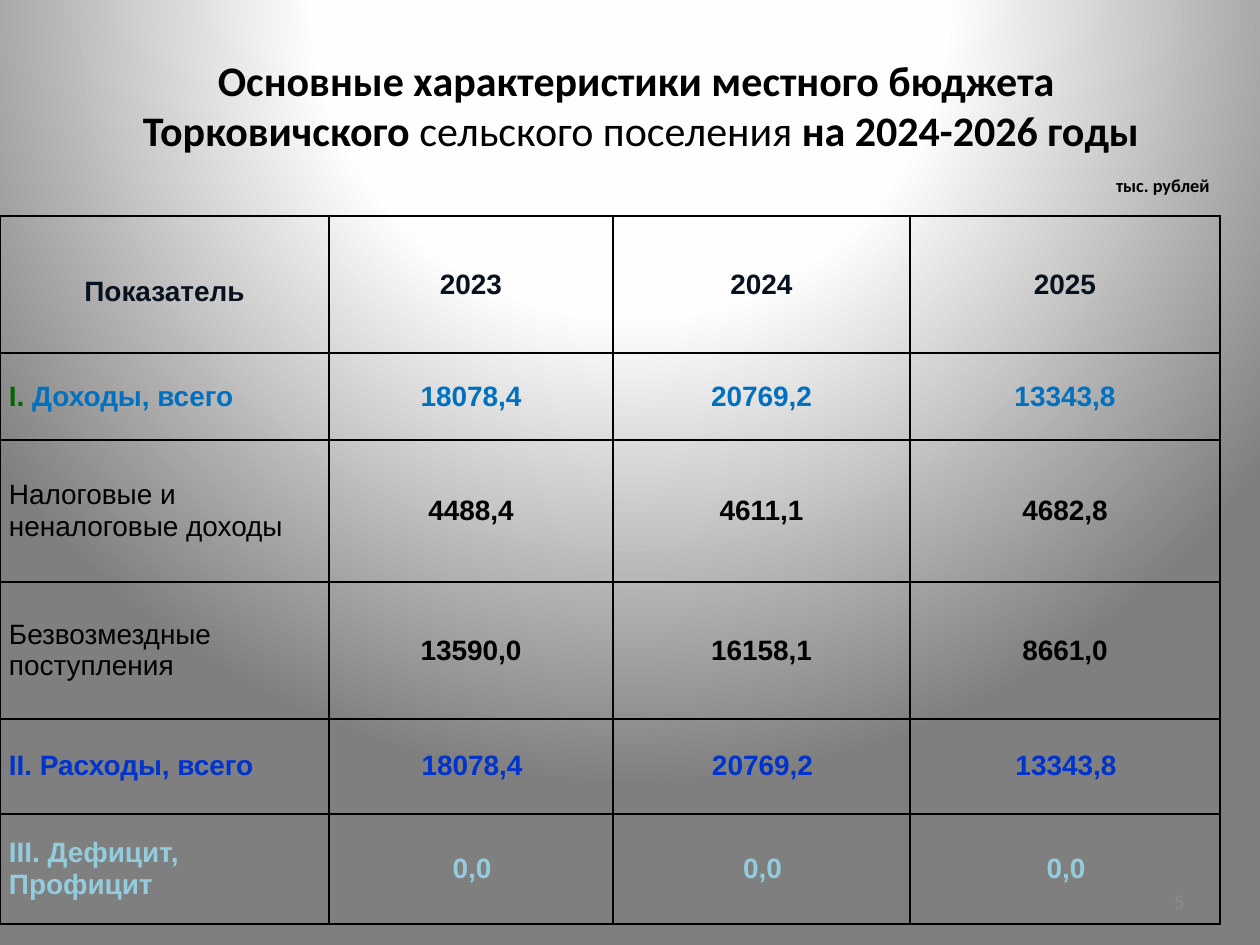
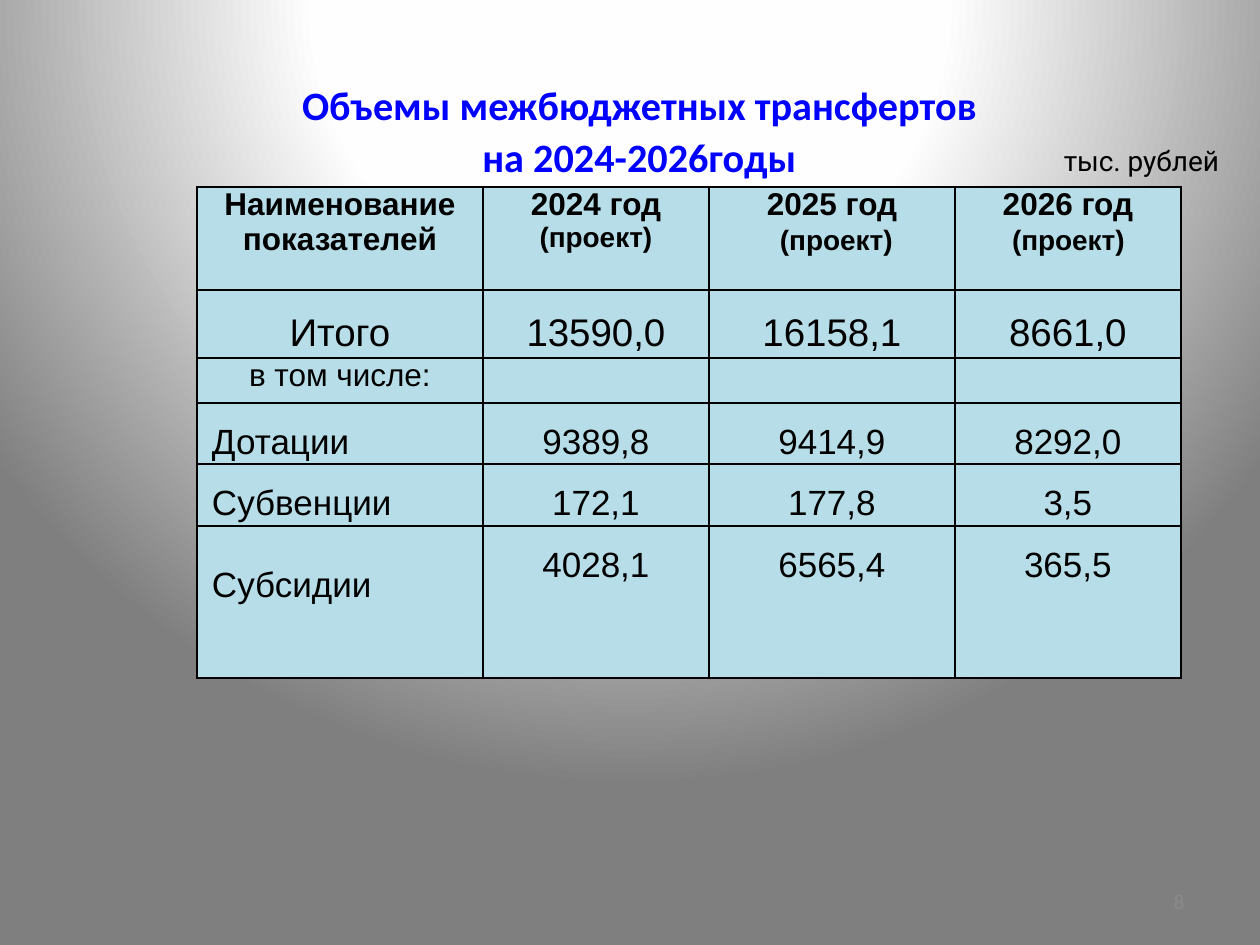
import copy
from dataclasses import dataclass

import lxml.etree
import pptx
import pptx.dml.color
import pptx.enum.text
import pptx.oxml
import pptx.oxml.ns
import pptx.util

PX = 914400 / 126
qn = pptx.oxml.ns.qn
ALIGN = pptx.enum.text.PP_ALIGN
ANCHOR = pptx.enum.text.MSO_ANCHOR


@dataclass(frozen=True)
class Theme:
    head: str = "Calibri"
    body: str = "Arial"
    unit: str = "Roboto"
    black: str = "000000"
    navy: str = "08121F"
    green: str = "006600"
    sky: str = "0070C0"
    royal: str = "0033CC"
    pale: str = "93CDDD"
    blue: str = "0000FF"
    cell: str = "B7DEE8"
    grey: str = "8B8B8B"
    glow: tuple = ((0, "FFFFFF"), (40, "FEFEFE"), (100, "7F7F7F"))
    tiny: float = 10.5
    note: int = 12
    small: int = 16
    mid: int = 18
    item: int = 20
    total: int = 22
    lead: int = 23
    top: int = 24
    gap: int = 25


T = Theme()

# A text is a string or a list of paragraphs; a paragraph is a string
# or a list of runs; a run is a string or a (string, format) pair.
DRAFT = ("(проект)", dict(size=T.small))
MID = dict(align="CENTER", first=-9)
END = dict(align="CENTER", first=2)
TALL = dict(align="CENTER", space=1.5)
ITEM = dict(size=T.item, left=15, space=1.5)

# Each table row: height, label, label format, values, value format
SLIDES = [
    dict(
        number="5",
        title=[["Основные характеристики местного бюджета \nТорковичского ",
                ("сельского поселения ", dict(bold=False)),
                "на 2024-2026 годы"]],
        box=(74, 50, 1134, 110),
        look=dict(size=T.top, color=T.black),
        unit=(1043, 168, 179, 35),
        mark=dict(size=T.tiny, font=T.head, bold=True, align="RIGHT"),
        at=(0, 216),
        cols=(329, 284, 297, 310),
        base=dict(size=T.small, anchor="MIDDLE", pad=9),
        fill=None,
        rows=[
            (137, "Показатель",
             dict(MID, space=1.5, color=T.navy, bold=True),
             ["2023", "2024", "2025"],
             dict(align="CENTER", color=T.navy, bold=True)),
            (87, [[("I. ", dict(color=T.green)), "Доходы, всего"]],
             dict(color=T.sky, bold=True),
             ["18078,4", "20769,2", "13343,8"],
             dict(MID, color=T.sky, bold=True)),
            (142, "Налоговые и неналоговые доходы", {},
             ["4488,4", "4611,1", "4682,8"], dict(MID, bold=True)),
            (137, "Безвозмездные поступления", {},
             ["13590,0", "16158,1", "8661,0"], dict(MID, bold=True)),
            (95, "II. Расходы, всего", dict(color=T.royal, bold=True),
             ["18078,4", "20769,2", "13343,8"],
             dict(END, color=T.royal, bold=True)),
            (110, "III. Дефицит, Профицит", dict(color=T.pale, bold=True),
             ["0,0"] * 3, dict(END, color=T.pale, bold=True)),
        ],
    ),
    dict(
        number="8",
        title=[["Объемы межбюджетных трансфертов \nна 2024-2026годы",
                (" ", dict(size=T.gap))]],
        box=(64, 76, 1150, 110),
        look=dict(size=T.lead, color=T.blue, left=11),
        unit=(1047, 145, 189, 30),
        mark=dict(size=T.small, font=T.unit, align="CENTER", anchor="MIDDLE"),
        at=(197, 187),
        cols=(286, 226, 246, 226),
        base=dict(size=T.mid, pad=0),
        fill=T.cell,
        rows=[
            (103, "Наименование показателей",
             dict(align="CENTER", bold=True),
             [[["2024 год ", DRAFT]],
              ["2025 год", [" ", DRAFT]],
              ["2026 год", [" ", DRAFT, (" ", dict(size=T.small))]]],
             dict(align="CENTER", bold=True)),
            (68, "Итого", dict(TALL, size=T.total),
             ["13590,0", "16158,1", "8661,0"], dict(TALL, size=T.total)),
            (45, "в том числе:", dict(align="CENTER"), [""] * 3, {}),
            (61, "Дотации", ITEM,
             ["9389,8", "9414,9", "8292,0"], dict(TALL, size=T.item)),
            (62, "Субвенции", ITEM,
             ["172,1", "177,8", "3,5"], dict(TALL, size=T.item)),
            (152, "Субсидии", dict(size=T.item, left=15, top=40),
             ["4028,1", "6565,4", "365,5"], dict(TALL, size=T.item)),
        ],
    ),
]


def px(n):
    return pptx.util.Emu(round(n * PX))


def rgb(code):
    return pptx.dml.color.RGBColor.from_string(code)


def write(frame, text, size, color=T.black, font=T.body, bold=False,
          align="LEFT", left=0, first=0, space=None):
    paras = text if isinstance(text, list) else [text]
    for i, runs in enumerate(paras):
        para = frame.add_paragraph() if i else frame.paragraphs[0]
        para.alignment = ALIGN[align]
        if space:
            para.line_spacing = space
        props = para._p.get_or_add_pPr()
        props.set("marL", str(px(left)))
        props.set("indent", str(px(first)))
        for run in runs if isinstance(runs, list) else [runs]:
            words, own = run if isinstance(run, tuple) else (run, {})
            look = dict(size=size, color=color, bold=bold) | own
            for j, line in enumerate(words.split("\n")):
                if j:
                    para.add_line_break()
                if not line:
                    continue
                part = para.add_run()
                part.text = line
                part.font.name = font
                part.font.size = pptx.util.Pt(look["size"])
                part.font.bold = look["bold"]
                part.font.color.rgb = rgb(look["color"])
        # Line breaks take the type size of the first run
        for gap in para._p.findall(qn("a:br")):
            gap.append(copy.deepcopy(para.runs[0]._r.rPr))


def label(slide, box, text, anchor="TOP", **look):
    frame = slide.shapes.add_textbox(*map(px, box)).text_frame
    frame.word_wrap = True
    frame.vertical_anchor = ANCHOR[anchor]
    write(frame, text, **look)


def edge(cell):
    """Draw a 1 pt line on all four sides."""
    props = cell._tc.get_or_add_tcPr()
    for side in "LRTB":
        line = lxml.etree.SubElement(props, qn("a:ln" + side), w="12700")
        paint = lxml.etree.SubElement(line, qn("a:solidFill"))
        lxml.etree.SubElement(paint, qn("a:srgbClr"), val=T.black)


def fill_cell(cell, text, fill, pad=0, top=0, anchor="TOP", **look):
    edge(cell)
    if fill:
        cell.fill.solid()
        cell.fill.fore_color.rgb = rgb(fill)
    else:
        cell.fill.background()
    cell.margin_left = cell.margin_right = px(pad)
    cell.margin_top, cell.margin_bottom = px(top), 0
    cell.vertical_anchor = ANCHOR[anchor]
    write(cell.text_frame, text, **look)


def add_grid(slide, data):
    cols, rows = data["cols"], data["rows"]
    size = sum(cols), sum(row[0] for row in rows)
    table = slide.shapes.add_table(
        len(rows), len(cols), *map(px, data["at"] + size)).table
    table.first_row = table.horz_banding = False
    for col, width in zip(table.columns, cols):
        col.width = px(width)
    for r, (height, name, style, values, look) in enumerate(rows):
        table.rows[r].height = px(height)
        for c, text in enumerate([name, *values]):
            own = look if c else style
            fill_cell(table.cell(r, c), text, data["fill"],
                      **(data["base"] | own))


def add_glow(master):
    """Give all slides the round gradient background."""
    master.background.fill.solid()
    old = master.element.find(".//" + qn("p:bgPr")).find(qn("a:solidFill"))
    stops = "".join(
        f'<a:gs pos="{pos * 1000}"><a:srgbClr val="{code}"/></a:gs>'
        for pos, code in T.glow)
    new = pptx.oxml.parse_xml(
        f'<a:gradFill {pptx.oxml.ns.nsdecls("a")} rotWithShape="1">'
        f'<a:gsLst>{stops}</a:gsLst><a:path path="circle">'
        '<a:fillToRect l="50000" t="-80000" r="50000" b="180000"/>'
        '</a:path></a:gradFill>')
    old.getparent().replace(old, new)


def add_page(deck, data):
    slide = deck.slides.add_slide(deck.slide_layouts[5])
    title = slide.shapes.title
    title.left, title.top, title.width, title.height = map(px, data["box"])
    frame = title.text_frame
    frame.auto_size = pptx.enum.text.MSO_AUTO_SIZE.NONE
    frame.vertical_anchor = ANCHOR.MIDDLE
    write(frame, data["title"], font=T.head, bold=True, align="CENTER",
          **data["look"])
    add_grid(slide, data)
    label(slide, data["unit"], "тыс. рублей", **data["mark"])
    label(slide, (903, 876, 294, 50), data["number"], anchor="MIDDLE",
          size=T.note, color=T.grey, font=T.head, align="RIGHT")


def main():
    deck = pptx.Presentation()
    deck.slide_width, deck.slide_height = px(1260), px(945)
    add_glow(deck.slide_master)
    for data in SLIDES:
        add_page(deck, data)
    deck.save("out.pptx")


if __name__ == "__main__":
    main()
